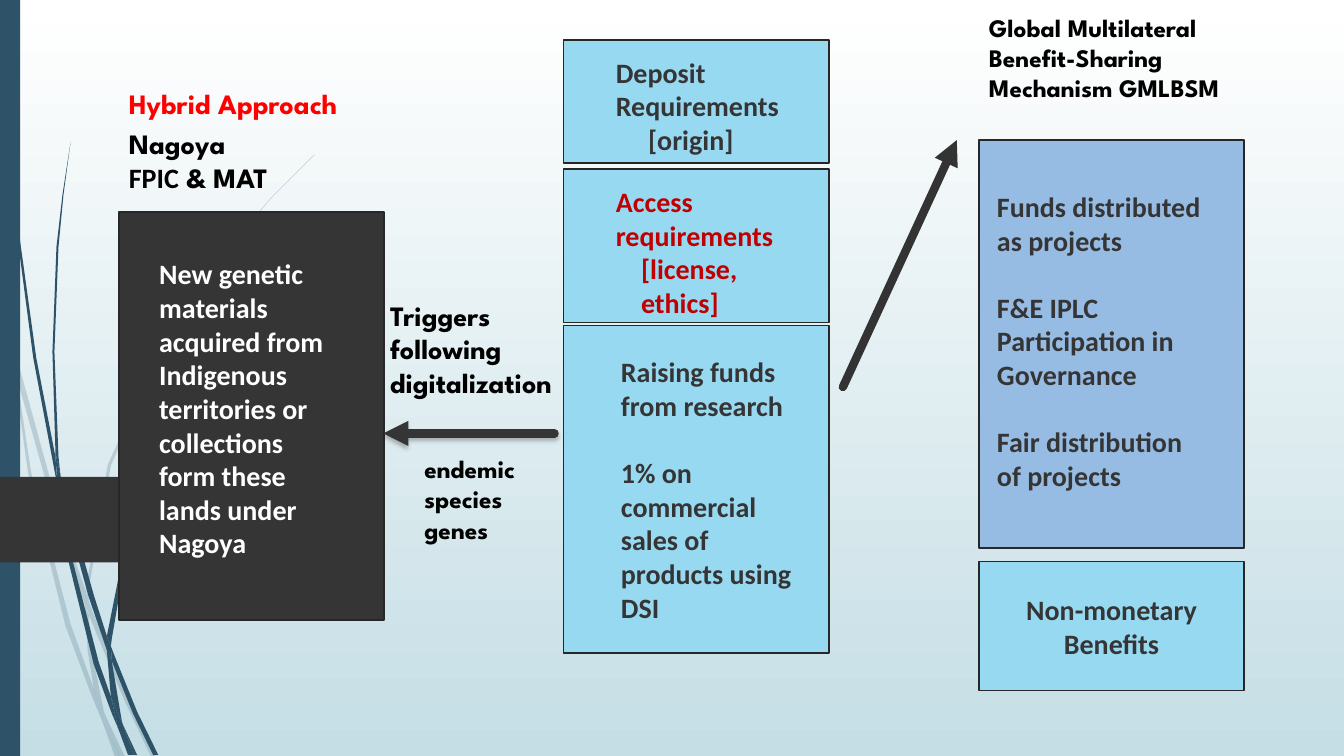
from dataclasses import dataclass

from lxml import etree
from pptx import Presentation, util as u
from pptx.dml.color import RGBColor
from pptx.enum import shapes, text
from pptx.oxml.ns import qn


@dataclass(frozen=True)
class Theme:
    ink: str = "353535"
    edge: str = "272727"
    teal: str = "2E5369"
    sky: str = "98D9F2"
    blue: str = "97BCE4"
    black: str = "000000"
    white: str = "FFFFFF"
    mist: str = "C5DEE5"
    alert: str = "FF0000"
    warning: str = "C00000"
    diagonal: str = "333333"
    heading: str = "League Spartan"
    body: str = "Calibri"
    large: int = 20
    small: int = 18
    line_gap: int = 24


T = Theme()
SLIDE_W, SLIDE_H = 13.33, 7.5
CARD_W = 2.63
COLUMN = {"nagoya": 1.18, "funds": 5.59, "mechanism": 9.71}

CARDS = [
    ("nagoya", 2.1, 4.05, T.ink),
    ("funds", 3.23, 3.25, T.sky),
    ("mechanism", 1.39, 4.05, T.blue),
    ("funds", 1.68, 1.52, T.sky),
    ("mechanism", 5.57, 1.28, T.sky),
    ("funds", 0.4, 1.22, T.sky),
]
NON_MONETARY = "Non-monetary Benefits"

LABELS = [
    ("nagoya", 0, 0.81, 2.54, 0.44, T.heading, T.large, T.alert,
     [("Hybrid Approach", 0, 0)]),
    ("nagoya", 0, 1.21, 2.5, 0.77, T.heading, T.large, T.black,
     [("Nagoya\vFPIC & MAT", 0, 0)]),
    ("nagoya", 0.3, 2.5, 2.03, 3.13, T.body, T.large, T.white,
     [("New genetic materials acquired from Indigenous territories or "
       "collections form these lands under Nagoya", 0, 0)]),
    ("nagoya", 2.59, 2.91, 1.96, 1.11, T.heading, T.large, T.black,
     [("Triggers", 0, 0), ("following digitalization", 0, 0)]),
    ("nagoya", 2.93, 4.45, 1.37, 1.01, T.heading, T.small, T.black,
     [("endemic", 0, 0), ("species", 0, 0), ("genes", 0, 0)]),
    ("funds", 0.42, 0.5, 1.96, 1.11, T.body, T.large, T.ink,
     [("Deposit Requirements", 0, 0), ("[origin]", 0.32, 0)]),
    ("funds", 0.42, 1.78, 2.03, 1.78, T.body, T.large, T.warning,
     [("Access requirements", 0, 0), ("[license,", 0.25, 0), ("ethics]", 0.25, 0)]),
    ("funds", 0.47, 3.47, 1.91, 2.79, T.body, T.large, T.ink,
     [("Raising funds from research", 0, 0),
      ("1% on commercial sales of products using DSI", 0, T.line_gap)]),
    ("mechanism", 0.08, 1.83, 2.44, 3.13, T.body, T.large, T.ink,
     [("Funds distributed as projects", 0, 0),
      ("F&E IPLC Participation in Governance", 0, T.line_gap),
      ("Fair distribution", 0, T.line_gap), ("of projects", 0, 0)]),
    ("mechanism", 0, 0.07, CARD_W, 1.31, T.heading, T.small, T.black,
     [("Global Multilateral Benefit-Sharing Mechanism GMLBSM", 0, 0)]),
]

ARROWS = [
    ((8.36, 3.84), (9.49, 1.39), T.diagonal, False),
    ((5.5, 4.3), (3.8, 4.3), T.ink, True),
]

PALE_GRASS = [
    [(.11, 3.5), (.09, 3.22), (0, 2.82), (0, 2.99), (.1, 3.44)],
    [(.58, 5.22), (.84, 5.99), (.85, 5.86), (.62, 5.2), (.14, 3.45), (.17, 3.76)],
    [(.92, 6.07), (.88, 5.96), (.88, 6.1), (1.23, 6.94), (1.5, 7.51), (1.55, 7.51), (1.27, 6.92)],
    [(1.19, 7.51), (1.24, 7.51), (1.05, 7.11)],
    [(.93, 6.83), (.7, 6.19), (.31, 4.69), (.17, 3.76), (.11, 3.5), (.28, 4.7), (.65, 6.21),
     (.92, 6.93), (1.01, 7.14), (.99, 7.07)],
    [(.84, 5.99), (.87, 6.46), (.93, 6.83), (.96, 6.92), (1.05, 7.11), (1.03, 7.06), (.91, 6.46),
     (.88, 6.1)],
    [(.88, 5.84), (1.1, 4.62), (1.6, 3.49), (2.29, 2.45), (2.68, 1.98), (3.12, 1.54), (3.12, 1.53),
     (2.68, 1.97), (2.28, 2.44), (1.58, 3.48), (1.07, 4.61), (.85, 5.84), (.88, 5.96)],
    [(1.01, 7.14), (1.14, 7.51), (1.19, 7.51)],
    [(.88, 6.08), (.88, 5.96), (.85, 5.86), (.84, 5.99)],
    [(.96, 6.92), (.93, 6.83), (.99, 7.07), (1.01, 7.14), (1.19, 7.51), (1.05, 7.11)],
]
DARK_GRASS = [
    [(.07, 1.1), (.17, 2.33), (.33, 3.55), (.56, 4.77), (.57, 4.81), (.55, 4.53), (.36, 3.55),
     (.19, 2.32), (.08, 1.09), (.04, 0), (.03, 0)],
    [(.88, 5.92), (1.06, 6.45), (1.06, 6.31), (.93, 5.9), (.6, 4.72), (.64, 5.05)],
    [(1.13, 6.49), (1.1, 6.41), (1.11, 6.56), (1.32, 7.08), (1.52, 7.49), (1.57, 7.49),
     (1.36, 7.06)],
    [(1.1, 6.91), (.98, 6.57), (.72, 5.56), (.64, 5.05), (.57, 4.77), (.68, 5.57), (.93, 6.59),
     (1.11, 7.08), (1.17, 7.22), (1.16, 7.17)],
    [(.6, 4.72), (.58, 4.53), (.54, 3.49), (.58, 2.45), (.63, 1.93), (.7, 1.41), (.62, 1.93),
     (.56, 2.45), (.52, 3.49), (.55, 4.49)],
    [(1.33, 7.49), (1.36, 7.49), (1.22, 7.19)],
    [(.57, 4.77), (.64, 5.05), (.6, 4.72), (.55, 4.49), (.55, 4.53)],
    [(1.11, 6.33), (1.25, 5.52), (1.58, 4.76), (2.05, 4.06), (2.31, 3.74), (2.61, 3.44),
     (2.31, 3.73), (2.04, 4.05), (1.56, 4.74), (1.22, 5.51), (1.06, 6.31), (1.1, 6.41)],
    [(1.17, 7.22), (1.27, 7.49), (1.31, 7.49)],
    [(1.06, 6.45), (1.1, 6.91), (1.16, 7.06), (1.22, 7.19), (1.21, 7.16), (1.11, 6.56)],
    [(1.06, 6.45), (1.11, 6.56), (1.1, 6.41), (1.06, 6.31)],
    [(1.16, 7.06), (1.1, 6.91), (1.17, 7.22), (1.3, 7.49), (1.33, 7.49), (1.22, 7.19)],
]
POINTER = [(0, 4.73), (1.5, 4.73), (1.91, 5.15), (1.5, 5.58), (0, 5.58)]


def rgb(colour):
    return RGBColor.from_string(colour)


def inches(*lengths):
    return [u.Inches(length) for length in lengths]


def child(parent, tag, **attributes):
    return etree.SubElement(parent, qn(tag), {k: str(v) for k, v in attributes.items()})


def paint(shape, fill, edge=None):
    shape.shadow.inherit = False
    shape.fill.solid()
    shape.fill.fore_color.rgb = rgb(fill)
    if edge:
        shape.line.color.rgb = rgb(edge)
        shape.line.width = u.Pt(1.25)
    else:
        shape.line.fill.background()
    return shape


def style(paragraph, font, size, colour):
    for run in paragraph.runs:
        run.font.name, run.font.size, run.font.bold = font, u.Pt(size), True
        run.font.color.rgb = rgb(colour)


def add_outline(slide, points, colour, opacity=100):
    start, *rest = [inches(*point) for point in points]
    builder = slide.shapes.build_freeform(*start)
    builder.add_line_segments(rest, close=True)
    outline = paint(builder.convert_to_shape(), colour)
    if opacity < 100:
        solid = outline._element.spPr.find(".//" + qn("a:srgbClr"))
        child(solid, "a:alpha", val=opacity * 1000)


def add_label(slide, column, dx, top, width, height, font, size, colour, lines):
    label = slide.shapes.add_textbox(*inches(COLUMN[column] + dx, top, width, height))
    frame = label.text_frame
    frame.word_wrap = True
    for i, (line, indent, gap) in enumerate(lines):
        paragraph = frame.paragraphs[0] if i == 0 else frame.add_paragraph()
        paragraph.space_before = u.Pt(gap)
        paragraph.text = line
        if indent:
            paragraph._p.get_or_add_pPr().set("marL", str(u.Inches(indent)))
        if line.endswith("FPIC & MAT"):
            paragraph.runs[-1].text = "FPIC"
            paragraph.add_run().text = " & MAT"
        style(paragraph, font, size, colour)
        for run in paragraph.runs:
            if run.text == "FPIC":
                run.font.name = T.body


def add_arrow(slide, start, end, colour, shadowed):
    arrow = slide.shapes.add_connector(shapes.MSO_CONNECTOR.STRAIGHT, *inches(*start, *end))
    arrow.line.color.rgb = rgb(colour)
    arrow.line.width = u.Pt(6)
    line = arrow.line._get_or_add_ln()
    line.set("cap", "rnd")
    child(line, "a:tailEnd", type="triangle")
    effects = child(arrow._element.spPr, "a:effectLst")
    if shadowed:
        shadow = child(effects, "a:outerShdw", blurRad=u.Pt(3), dist=u.Pt(2), dir=5400000)
        child(child(shadow, "a:srgbClr", val=T.black), "a:alpha", val=25000)


def main():
    deck = Presentation()
    deck.slide_width, deck.slide_height = inches(SLIDE_W, SLIDE_H)
    slide = deck.slides.add_slide(deck.slide_layouts[6])
    backdrop = slide.background.fill
    backdrop.gradient()
    backdrop.gradient_angle = 270
    for stop, position, colour in zip(backdrop.gradient_stops, (0, 1), (T.white, T.mist)):
        stop.position, stop.color.rgb = position, rgb(colour)

    for blades, opacity in ((PALE_GRASS, 20), (DARK_GRASS, 100)):
        for blade in blades:
            add_outline(slide, blade, T.teal, opacity)
    box = shapes.MSO_SHAPE.RECTANGLE
    paint(slide.shapes.add_shape(box, *inches(0, 0, 0.2, SLIDE_H)), T.teal)
    add_outline(slide, POINTER, T.ink)

    for column, top, height, fill in CARDS:
        place = inches(COLUMN[column], top, CARD_W, height)
        card = paint(slide.shapes.add_shape(box, *place), fill, T.edge)
        if (column, fill) == ("mechanism", T.sky):
            card.text_frame.text = NON_MONETARY
            card.text_frame.vertical_anchor = text.MSO_ANCHOR.MIDDLE
            card.text_frame.paragraphs[0].alignment = text.PP_ALIGN.CENTER
            style(card.text_frame.paragraphs[0], T.body, T.large, T.ink)
    for label in LABELS:
        add_label(slide, *label)
    for arrow in ARROWS:
        add_arrow(slide, *arrow)
    deck.save("out.pptx")


if __name__ == "__main__":
    main()
